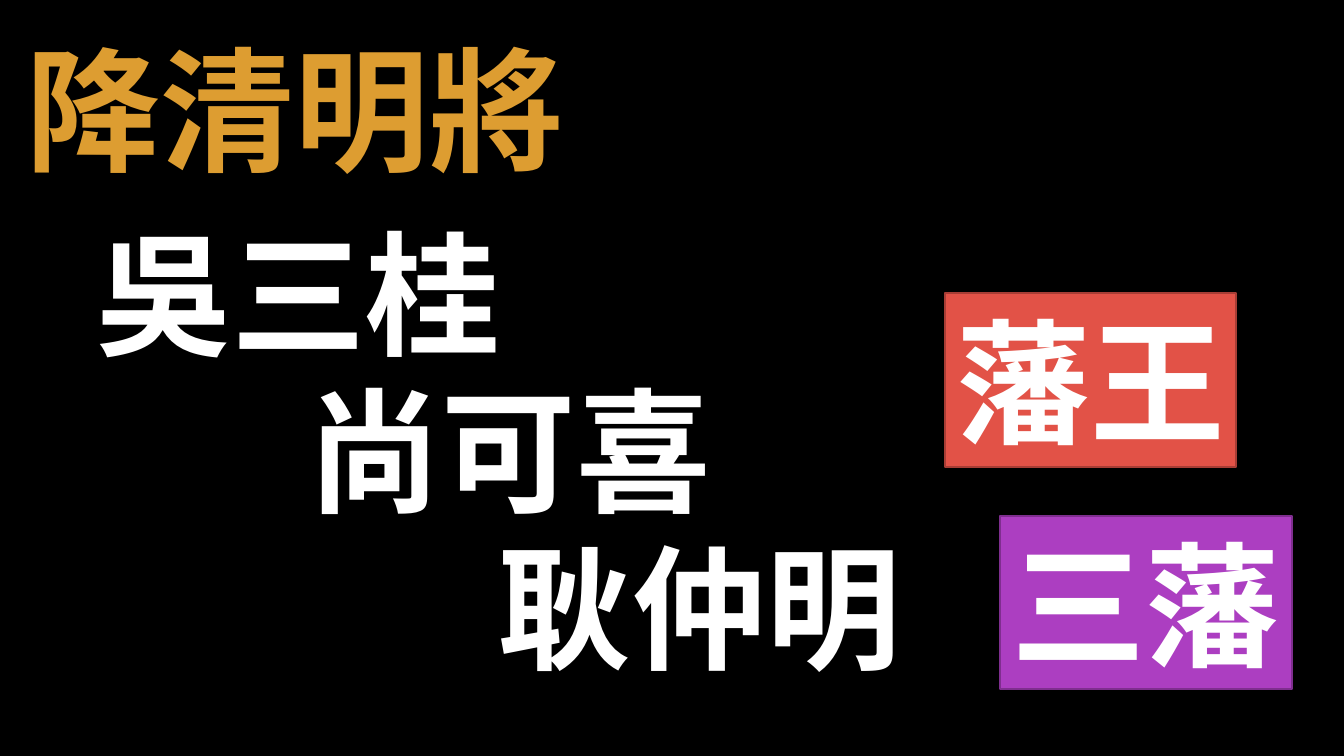
from lxml.etree import SubElement
from pptx import Presentation
from pptx.dml.color import RGBColor
from pptx.enum.shapes import MSO_SHAPE
from pptx.enum.text import MSO_ANCHOR, PP_ALIGN
from pptx.oxml.ns import qn
from pptx.util import Inches, Pt

COLORS = {
    "black": "000000", "white": "FFFFFF", "gold": "DD9D31",
    "red": "E25247", "dark_red": "A73D35",
    "purple": "AC3EC1", "dark_purple": "7F2E8F",
}


def color(name):
    return RGBColor.from_string(COLORS[name])


class SlideBuilder:
    FONT = "Noto Sans CJK SC"
    SIZE = 96
    HEIGHT = 1.72

    def __init__(self, prs):
        self.s = prs.slides.add_slide(prs.slide_layouts[6])

    def background(self, name):
        fill = self.s.background.fill
        fill.solid()
        fill.fore_color.rgb = color(name)

    def set_text(self, shape, text, text_color, align):
        tf = shape.text_frame
        tf.text = text
        tf.word_wrap = False
        tf.vertical_anchor = MSO_ANCHOR.MIDDLE
        p = tf.paragraphs[0]
        p.alignment = align
        r = p.runs[0]
        r.font.name = self.FONT
        r.font.size = Pt(self.SIZE)
        r.font.bold = True
        r.font.color.rgb = color(text_color)
        # East Asian typeface
        SubElement(r.font._element, qn("a:ea")).set("typeface", self.FONT)

    def text(self, left, top, width, text, text_color="white"):
        tb = self.s.shapes.add_textbox(
            Inches(left), Inches(top), Inches(width), Inches(self.HEIGHT))
        self.set_text(tb, text, text_color, PP_ALIGN.LEFT)

    def label(self, left, top, width, text, fill, line):
        sp = self.s.shapes.add_shape(
            MSO_SHAPE.RECTANGLE,
            Inches(left), Inches(top), Inches(width), Inches(self.HEIGHT))
        sp.shadow.inherit = False
        sp.fill.solid()
        sp.fill.fore_color.rgb = color(fill)
        sp.line.color.rgb = color(line)
        sp.line.width = Pt(1.5)
        self.set_text(sp, text, "white", PP_ALIGN.CENTER)


def main():
    prs = Presentation()
    prs.slide_width, prs.slide_height = Inches(13.33), Inches(7.5)
    slide = SlideBuilder(prs)
    slide.background("black")

    # Generals, stepping down to the right
    generals = [("吳三桂", 0.86), ("尚可喜", 2.95), ("耿仲明", 4.84)]
    for i, (name, left) in enumerate(generals):
        slide.text(left, 2.03 + 1.56 * i, 4.24, name)

    # Titles they received
    slide.label(9.37, 2.91, 2.89, "藩王", "red", "dark_red")
    slide.label(9.92, 5.12, 2.89, "三藩", "purple", "dark_purple")

    # Heading
    slide.text(0.16, 0.21, 5.59, "降清明將", "gold")

    prs.save("out.pptx")


if __name__ == "__main__":
    main()
